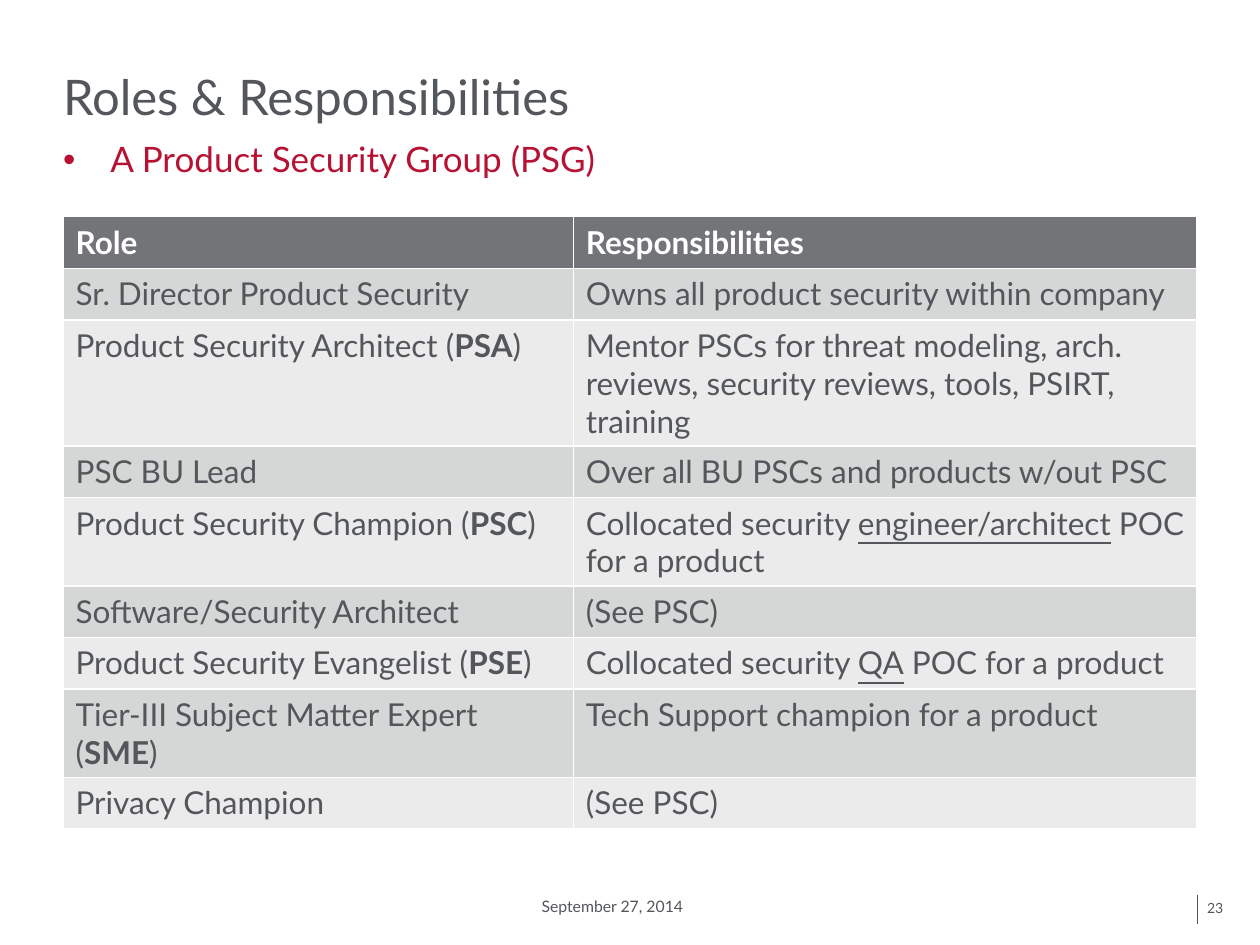
from lxml import etree
from pptx import Presentation
from pptx.dml.color import RGBColor
from pptx.enum import shapes, text
from pptx.oxml.ns import qn
from pptx.util import Inches, Pt

GREY = RGBColor(0x53, 0x56, 0x5A)
RED = RGBColor(0xB7, 0x12, 0x34)
WHITE = RGBColor(0xFF, 0xFF, 0xFF)
HEAD = RGBColor(0x72, 0x74, 0x78)
BANDS = RGBColor(0xEB, 0xEB, 0xEC), RGBColor(0xD5, 0xD6, 0xD6)

TITLE = "Roles & Responsibilities"
SUB = "A Product Security Group (PSG)"
DATE = "September 27, 2014"
PAGE = "23"

# Words between asterisks stand out: bold for roles, underlined for duties.
ROWS = [
    ("Role", "Responsibilities"),
    ("Sr. Director Product Security",
     "Owns all product security within company"),
    ("Product Security Architect (*PSA*)",
     "Mentor PSCs for threat modeling, arch. reviews, security reviews, "
     "tools, PSIRT, training"),
    ("PSC BU Lead", "Over all BU PSCs and products w/out PSC"),
    ("Product Security Champion (*PSC*)",
     "Collocated security *engineer/architect* POC for a product"),
    ("Software/Security Architect", "(See PSC)"),
    ("Product Security Evangelist (*PSE*)",
     "Collocated security *QA* POC for a product"),
    ("Tier-III Subject Matter Expert (*SME*)",
     "Tech Support champion for a product"),
    ("Privacy Champion", "(See PSC)"),
]
MARKS = "bold", "underline"
WIDTHS = 4.05, 4.95
ROW_H = 0.41


def style(font, size, color, **marks):
    font.color.rgb = color
    for key, val in dict(name="Lato", size=Pt(size), **marks).items():
        setattr(font, key, val)


def write(shape, words, at, size, color, frame=None, para=None):
    """Place a text shape and fill it with one formatted paragraph."""
    shape.left, shape.top, shape.width, shape.height = map(Inches, at)
    tf = shape.text_frame
    tf.text = words
    line = tf.paragraphs[0]
    base = dict(word_wrap=True, auto_size=text.MSO_AUTO_SIZE.NONE)
    for key, val in {**base, **(frame or {})}.items():
        setattr(tf, key, val)
    for key, val in {"alignment": text.PP_ALIGN.LEFT, **(para or {})}.items():
        setattr(line, key, val)
    style(line.runs[0].font, size, color)


def fill_cell(cell, words, row, col):
    cell.fill.solid()
    cell.fill.fore_color.rgb = BANDS[row % 2] if row else HEAD
    line = cell.text_frame.paragraphs[0]
    for i, part in enumerate(words.split("*")):
        run = line.add_run()
        run.text = part
        marks = {"bold": row == 0}
        if i % 2:
            marks[MARKS[col]] = True
        style(run.font, 18, WHITE if row == 0 else GREY, **marks)


def main():
    prs = Presentation()
    prs.slide_width, prs.slide_height = Inches(10), Inches(7.5)
    slide = prs.slides.add_slide(prs.slide_layouts[1])
    items = slide.shapes

    flush = dict.fromkeys(
        ("margin_left", "margin_top", "margin_right", "margin_bottom"), 0)
    tight = {"line_spacing": 0.9}
    anchor = text.MSO_ANCHOR

    write(items.title, TITLE, (0.5, 0.2, 9, 0.8), 28, GREY,
          {**flush, "vertical_anchor": anchor.BOTTOM}, tight)

    body = slide.placeholders[1]
    props = body.text_frame.paragraphs[0]._p.get_or_add_pPr()
    props.set("marL", "0")
    props.set("indent", "0")
    etree.SubElement(props, qn("a:buNone"))
    write(body, SUB, (0.5, 1.13, 9, 0.36), 20, RED,
          {**flush, "margin_bottom": Inches(0.05)},
          {**tight, "space_before": Pt(0), "space_after": Pt(6)})

    table = items.add_table(
        len(ROWS), len(WIDTHS), Inches(0.5), Inches(1.72),
        Inches(sum(WIDTHS)), Inches(ROW_H * len(ROWS))).table
    for col, width in zip(table.columns, WIDTHS):
        col.width = Inches(width)
    for r, row in enumerate(ROWS):
        table.rows[r].height = Inches(ROW_H)
        for c, words in enumerate(row):
            fill_cell(table.cell(r, c), words, r, c)

    write(items.add_textbox(0, 0, 0, 0), DATE, (4.2, 7.07, 1.77, 0.24),
          9, GREY)
    write(items.add_textbox(0, 0, 0, 0), PAGE, (9.58, 7.1, 0.25, 0.23),
          8, GREY, {**flush, "vertical_anchor": anchor.MIDDLE}, tight)

    rule = items.add_connector(
        shapes.MSO_CONNECTOR.STRAIGHT,
        Inches(9.5), Inches(7.1), Inches(9.5), Inches(7.33))
    rule.line.color.rgb = GREY
    rule.line.width = Pt(0.5)
    etree.SubElement(rule._element.spPr, qn("a:effectLst"))

    prs.save("out.pptx")


if __name__ == "__main__":
    main()
